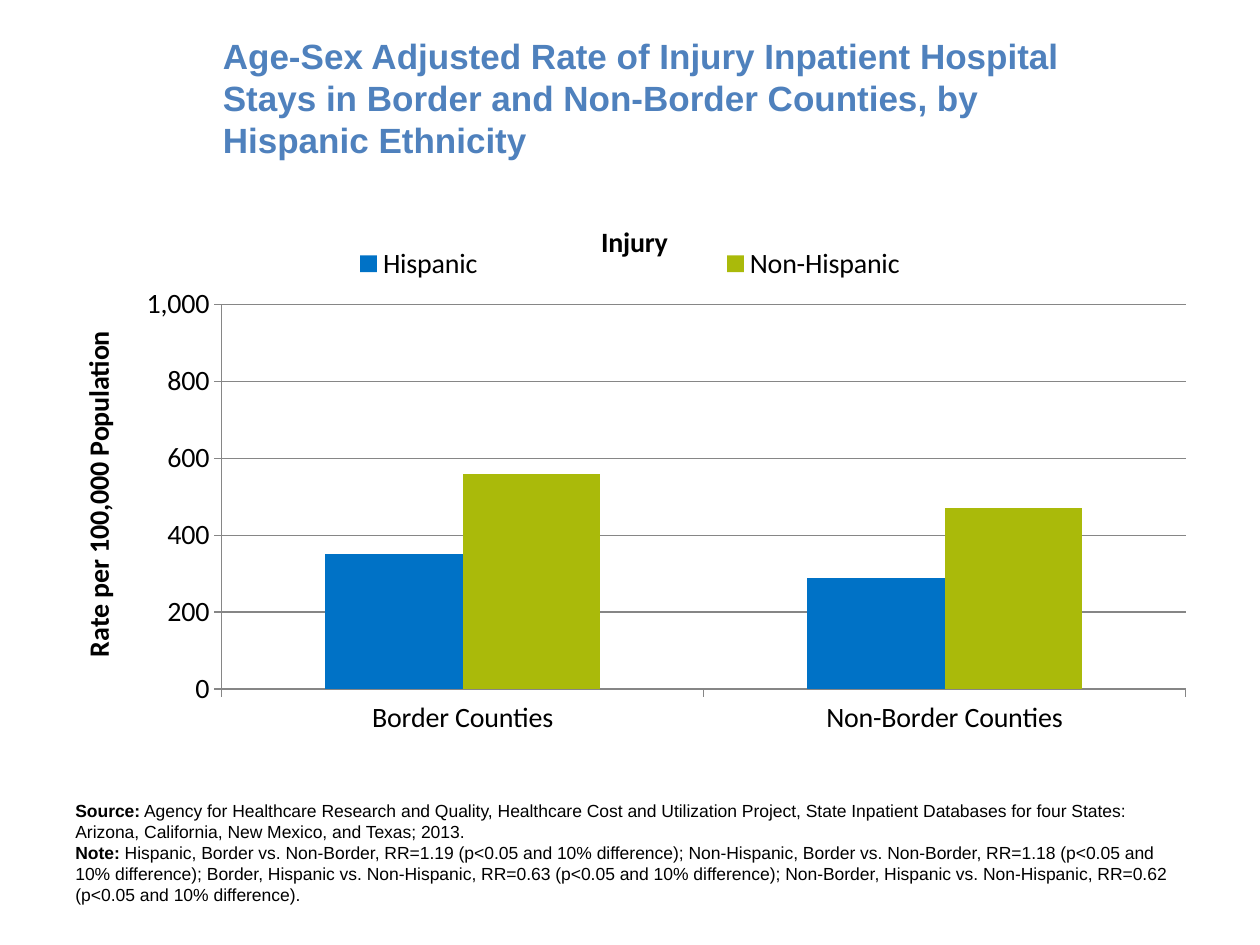
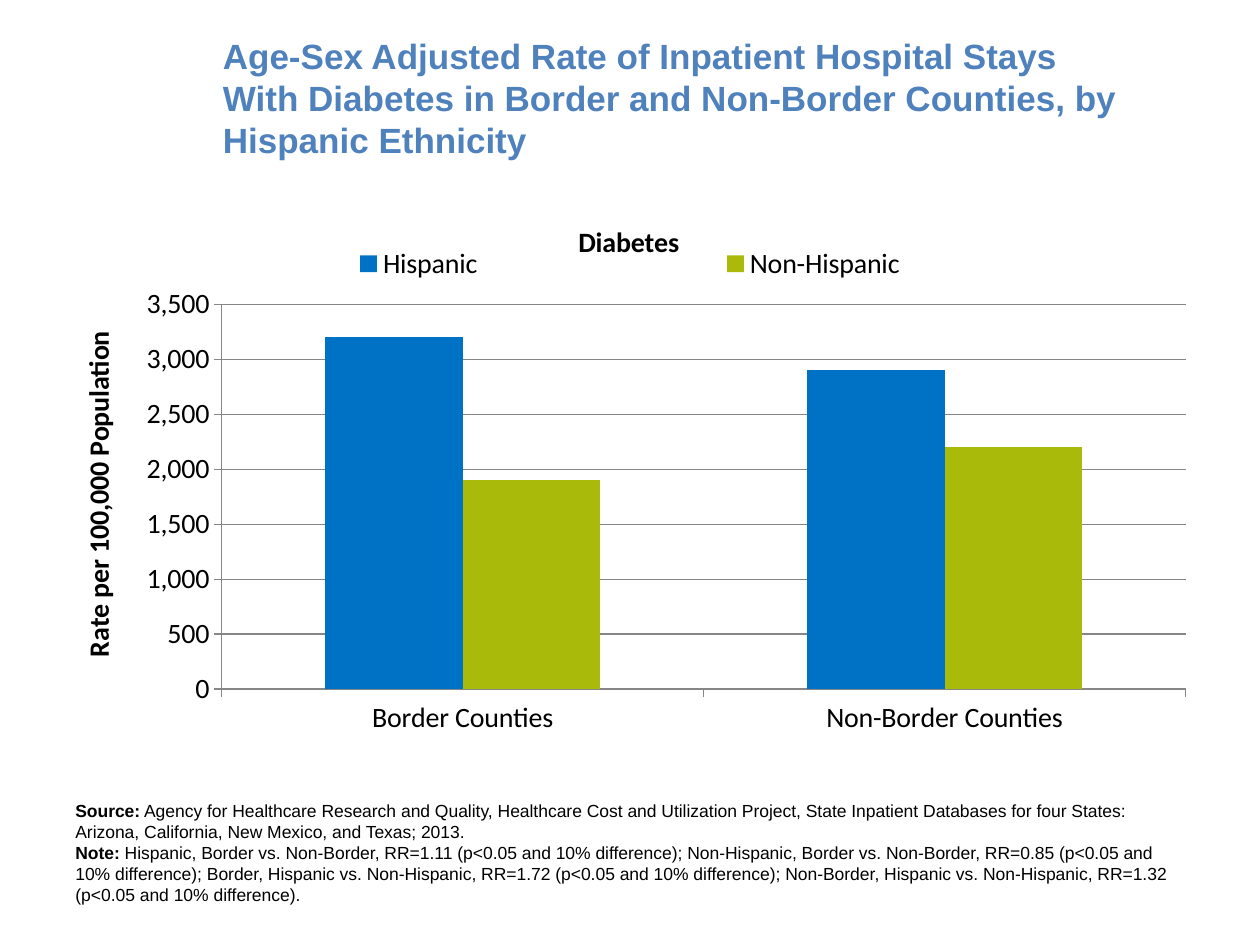
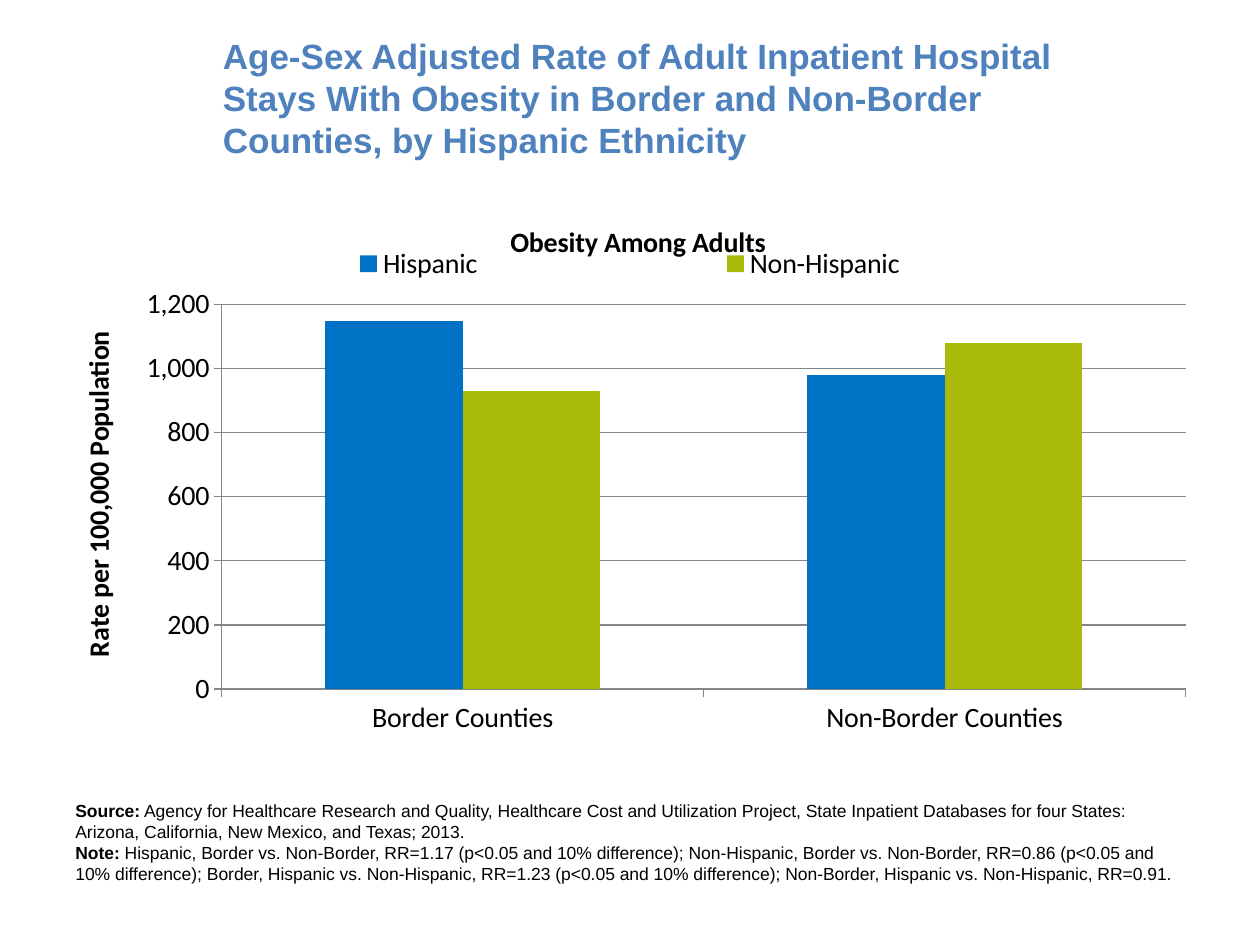
from lxml.etree import SubElement
from pptx import Presentation
from pptx.chart.data import CategoryChartData
from pptx.dml.color import RGBColor
from pptx.enum.chart import XL_CHART_TYPE, XL_LEGEND_POSITION, XL_TICK_MARK
from pptx.enum.text import MSO_ANCHOR, MSO_AUTO_SIZE
from pptx.oxml.ns import qn
from pptx.util import Inches, Pt

TITLE_BLUE = "4F81BD"
BLACK = "000000"
AXIS_GREY = "868686"
SERIES_COLORS = {"Hispanic": "0072C6", "Non-Hispanic": "AABA0A"}
COUNTIES = ["Border Counties", "Non-Border Counties"]
COMPARISONS = [
    "Hispanic, Border vs. Non-Border",
    "Non-Hispanic, Border vs. Non-Border",
    "Border, Hispanic vs. Non-Hispanic",
    "Non-Border, Hispanic vs. Non-Hispanic",
]
SOURCE = (
    "Agency for Healthcare Research and Quality, Healthcare Cost and Utilization Project, "
    "State Inpatient Databases for four States: Arizona, California, New Mexico, and Texas; 2013."
)
CONDITIONS = [
    {
        "title": "Age-Sex Adjusted Rate of Injury Inpatient Hospital Stays in Border "
        "and Non-Border Counties, by Hispanic Ethnicity",
        "name": "Injury",
        "name_left": 0.47,
        "rates": [(350, 290), (560, 470)],
        "axis": (1000, 200),
        "ratios": [1.19, 1.18, 0.63, 0.62],
        "footer_height": 0.94,
    },
    {
        "title": "Age-Sex Adjusted Rate of Inpatient Hospital Stays With Diabetes in Border "
        "and Non-Border Counties, by Hispanic Ethnicity",
        "name": "Diabetes",
        "name_left": 0.45,
        "rates": [(3200, 2900), (1900, 2200)],
        "axis": (3500, 500),
        "ratios": [1.11, 0.85, 1.72, 1.32],
        "footer_height": 0.94,
    },
    {
        "title": "Age-Sex Adjusted Rate of Adult Inpatient Hospital Stays With Obesity in Border "
        "and Non-Border Counties, by Hispanic Ethnicity",
        "name": "Obesity Among Adults",
        "name_left": 0.39,
        "rates": [(1150, 980), (930, 1080)],
        "axis": (1200, 200),
        "ratios": [1.17, 0.86, 1.23, 0.91],
        "footer_height": 0.77,
    },
]


def rgb(color):
    """Turn a hex string into a colour."""
    return RGBColor.from_string(color)


def format_font(font, size=16, name="Calibri", color=BLACK, bold=False):
    """Set the size, typeface, colour and weight of a font."""
    font.size = Pt(size)
    font.name = name
    font.bold = bold
    font.color.rgb = rgb(color)


def add_text(paragraph, text, **font_format):
    """Append one formatted run to a paragraph."""
    run = paragraph.add_run()
    run.text = text
    format_font(run.font, **font_format)


def add_text_box(slide, left, top, width, height):
    """Add an empty wrapping text box and return its text frame."""
    shape = slide.shapes.add_textbox(Inches(left), Inches(top), Inches(width), Inches(height))
    shape.text_frame.word_wrap = True
    return shape.text_frame


def add_title(slide, text):
    """Add the slide title."""
    frame = add_text_box(slide, 1.67, 0.3, 7.42, 0.95)
    frame.vertical_anchor = MSO_ANCHOR.MIDDLE
    add_text(frame.paragraphs[0], text, size=20, name="Arial", color=TITLE_BLUE, bold=True)


def describe_ratios(ratios):
    """Word the rate ratios, marking those at least 10% away from one."""
    return "; ".join(
        f"{comparison}, RR={ratio:.2f}"
        + (" (p<0.05 and 10% difference)" if abs(ratio - 1) >= 0.1 else "")
        for comparison, ratio in zip(COMPARISONS, ratios)
    ) + "."


def add_footer(slide, ratios, height):
    """Add the source and the note under the chart."""
    frame = add_text_box(slide, 0.5, 6.3, 9, height)
    frame.auto_size = MSO_AUTO_SIZE.SHAPE_TO_FIT_TEXT
    paragraphs = [frame.paragraphs[0], frame.add_paragraph()]
    entries = [("Source:", SOURCE), ("Note:", describe_ratios(ratios))]
    for paragraph, (label, text) in zip(paragraphs, entries):
        add_text(paragraph, label, size=10, name="Arial", bold=True)
        add_text(paragraph, " " + text, size=10, name="Arial")


def place(element, index, inner=False, **fractions):
    """Give a chart part a manual layout in fractions of the chart."""
    for old_layout in element.findall(qn("c:layout")):
        element.remove(old_layout)
    layout = SubElement(element, qn("c:layout"))
    element.insert(index, layout)
    manual = SubElement(layout, qn("c:manualLayout"))
    settings = {"layoutTarget": "inner"} if inner else {}
    settings.update(xMode="edge", yMode="edge", **fractions)
    for tag, value in settings.items():
        SubElement(manual, qn(f"c:{tag}")).set("val", str(value))


def set_chart_title(owner, title, text, x, y):
    """Write and place the title of a chart or of an axis."""
    owner.has_title = True
    add_text(title.text_frame.paragraphs[0], text, bold=True)
    place(title._element, 1, x=x, y=y)


def format_axis(axis):
    """Give an axis its text, ticks and line."""
    format_font(axis.tick_labels.font)
    axis.major_tick_mark = XL_TICK_MARK.OUTSIDE
    axis.minor_tick_mark = XL_TICK_MARK.NONE
    format_line(axis.format.line)


def format_line(line):
    """Draw a thin grey line."""
    line.color.rgb = rgb(AXIS_GREY)
    line.width = Pt(0.75)


def format_value_axis(axis, maximum, step):
    """Set the scale, gridlines and title of the rate axis."""
    format_axis(axis)
    axis.minimum_scale = 0
    axis.maximum_scale = maximum
    axis.major_unit = step
    axis.has_major_gridlines = True
    format_line(axis.major_gridlines.format.line)
    axis.tick_labels.number_format = "#,##0"
    axis.tick_labels.number_format_is_linked = False
    set_chart_title(axis, axis.axis_title, "Rate per 100,000 Population", 0.01, 0.23)


def add_legend(chart):
    """Add the legend across the top of the chart."""
    chart.has_legend = True
    chart.legend.position = XL_LEGEND_POSITION.TOP
    chart.legend.include_in_layout = False
    format_font(chart.legend.font)
    place(chart.legend._element, 1, x=0.05, y=0.08, w=0.9, h=0.07)


def add_rate_chart(slide, name, name_left, rates, axis):
    """Add the clustered columns of rates by county and ethnicity."""
    data = CategoryChartData()
    data.categories = COUNTIES
    for ethnicity, values in zip(SERIES_COLORS, rates):
        data.add_series(ethnicity, values)
    chart = slide.shapes.add_chart(
        XL_CHART_TYPE.COLUMN_CLUSTERED, Inches(0.5), Inches(1.6), Inches(9), Inches(4.3), data
    ).chart
    format_font(chart.font, size=10, name="Arial")
    set_chart_title(chart, chart.chart_title, name, name_left, 0.03)
    add_legend(chart)
    format_axis(chart.category_axis)
    format_value_axis(chart.value_axis, *axis)
    plot = chart.plots[0]
    plot.gap_width = 150
    plot.overlap = 0
    plot.vary_by_categories = False
    for series in plot.series:
        series.format.fill.solid()
        series.format.fill.fore_color.rgb = rgb(SERIES_COLORS[series.name])
    place(chart._chartSpace.chart.plotArea, 0, inner=True, x=0.14, y=0.19, w=0.85, h=0.71)


def main():
    """Build one slide for each condition."""
    presentation = Presentation()
    presentation.slide_width = Inches(10)
    presentation.slide_height = Inches(7.5)
    for condition in CONDITIONS:
        slide = presentation.slides.add_slide(presentation.slide_layouts[6])
        add_title(slide, condition["title"])
        add_footer(slide, condition["ratios"], condition["footer_height"])
        add_rate_chart(
            slide, condition["name"], condition["name_left"], condition["rates"], condition["axis"]
        )
    presentation.save("out.pptx")


if __name__ == "__main__":
    main()
